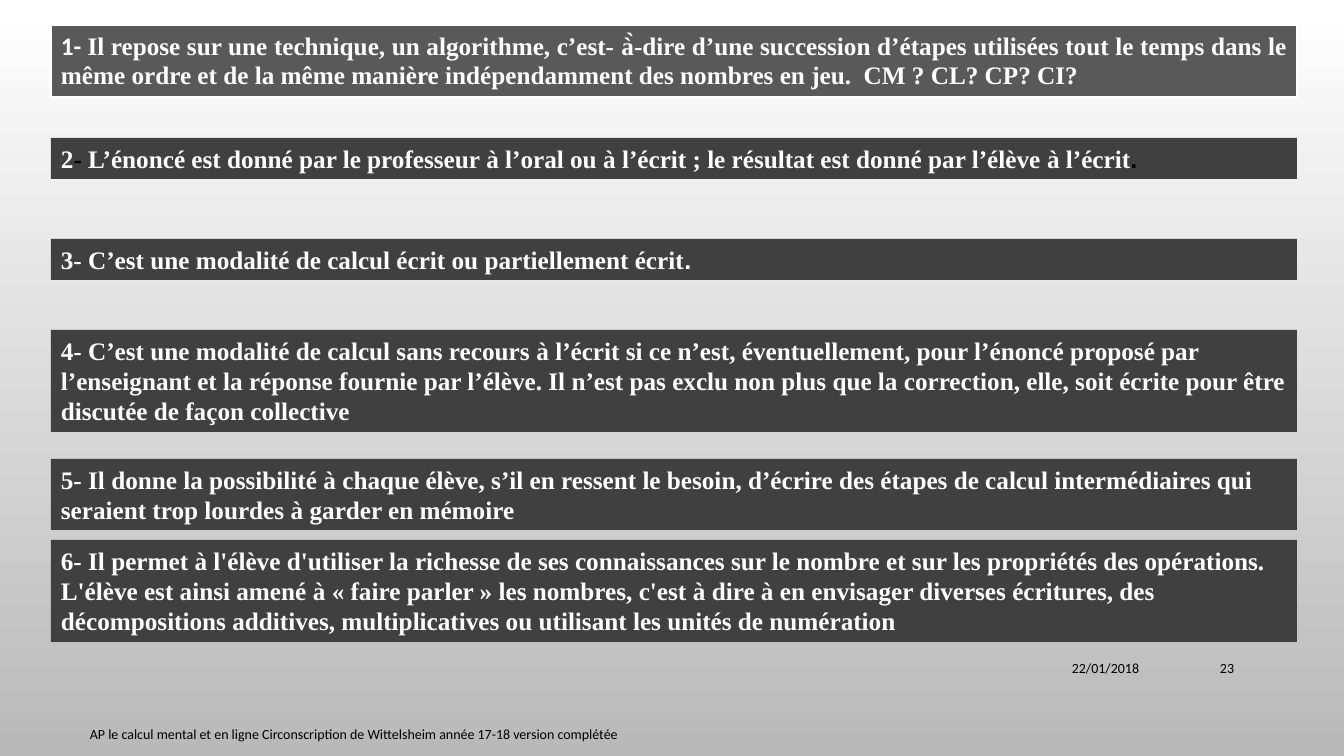
from dataclasses import dataclass

from lxml.etree import SubElement
from pptx import Presentation
from pptx.dml.color import RGBColor
from pptx.enum.shapes import MSO_SHAPE as Shape
from pptx.enum.text import MSO_ANCHOR as Anchor, MSO_AUTO_SIZE as AutoSize, PP_ALIGN as Align
from pptx.oxml.ns import qn
from pptx.util import Pt

EMU_PER_PX = 12192000 / 1344
LEFT, WIDTH = 51, 1246


def px(*lengths):
    return [round(length * EMU_PER_PX) for length in lengths]


@dataclass(frozen=True)
class Theme:
    white: str = "FFFFFF"
    black: str = "000000"
    backdrop: str = "B9B9B9"
    panel: str = "404040"
    header: str = "595959"
    serif: str = "Times New Roman"
    sans: str = "Calibri"
    mark: str = "Arial"
    body_size: int = 18
    footer_size: int = 10


class SlideBuilder:
    """Draws styled elements on the current slide."""

    def __init__(self, presentation, theme):
        self.theme = theme
        self.slide = presentation.slides.add_slide(presentation.slide_layouts[6])

    def background(self):
        fill = self.slide.background.fill
        fill.gradient()
        fill.gradient_angle = 270
        for stop, color in zip(fill.gradient_stops, (self.theme.white, self.theme.backdrop)):
            stop.color.rgb = RGBColor.from_string(color)

    def add_runs(self, frame, runs, align=Align.LEFT, **defaults):
        theme = self.theme
        base = dict(name=theme.serif, size=theme.body_size, bold=True, color=theme.white)
        paragraph = frame.paragraphs[0]
        paragraph.alignment = align
        for text, changes in runs:
            style = {**base, **defaults, **changes}
            style["size"] = Pt(style["size"])
            run = paragraph.add_run()
            run.text = text
            run.font.color.rgb = RGBColor.from_string(style.pop("color"))
            for name, value in style.items():
                setattr(run.font, name, value)

    def panel(self, top, height, runs):
        shape = self.slide.shapes.add_shape(Shape.RECTANGLE, *px(LEFT, top, WIDTH, height))
        shape.shadow.inherit = False
        shape.fill.solid()
        shape.fill.fore_color.rgb = RGBColor.from_string(self.theme.panel)
        shape.line.fill.background()
        frame = shape.text_frame
        settings = dict(word_wrap=True, vertical_anchor=Anchor.TOP,
                        auto_size=AutoSize.SHAPE_TO_FIT_TEXT)
        for name, value in settings.items():
            setattr(frame, name, value)
        self.add_runs(frame, runs)

    def table(self, top, height, runs):
        graphic = self.slide.shapes.add_table(1, 1, *px(LEFT, top, WIDTH, height))
        table = graphic.table
        table.first_row = table.horz_banding = False
        cell = table.cell(0, 0)
        cell.margin_left, cell.margin_right, cell.margin_top, cell.margin_bottom = px(10, 10, 6, 6)
        properties = cell._tc.get_or_add_tcPr()
        for side, points in dict(lnL=1, lnR=1, lnT=1, lnB=3).items():
            border = SubElement(properties, qn(f"a:{side}"), w=str(Pt(points)))
            solid = SubElement(border, qn("a:solidFill"))
            SubElement(solid, qn("a:srgbClr"), val=self.theme.white)
        cell.fill.solid()
        cell.fill.fore_color.rgb = RGBColor.from_string(self.theme.header)
        self.add_runs(cell.text_frame, runs, Align.JUSTIFY)

    def footer(self, left, top, width, text, align):
        frame = self.slide.shapes.add_textbox(*px(left, top, width, 40)).text_frame
        frame.word_wrap = True
        frame.vertical_anchor = Anchor.MIDDLE
        theme = self.theme
        self.add_runs(frame, [(text, {})], align, name=theme.sans, size=theme.footer_size,
                      bold=False, color=theme.black)


def main():
    presentation = Presentation()
    presentation.slide_width, presentation.slide_height = px(1344, 756)
    theme = Theme()
    builder = SlideBuilder(presentation, theme)
    builder.background()

    footers = [
        (847, 648, 302, "22/01/2018", Align.RIGHT),
        (80, 714, 736, "AP le calcul mental et en ligne Circonscription de Wittelsheim "
                       "année 17-18 version complétée", Align.LEFT),
        (1159, 648, 85, "23", Align.RIGHT),
    ]
    for footer in footers:
        builder.footer(*footer)

    builder.table(25, 68, [
        ("1- ", dict(name=theme.sans)),
        ("Il repose sur une technique, un algorithme, c’est- à̀-dire d’une succession d’étapes "
         "utilisées tout le temps dans le même ordre et de la même manière indépendamment "
         "des nombres en jeu.  CM ? CL? CP? CI?", {}),
    ])

    panels = [
        (138, 41, [
            ("2", {}),
            ("- ", dict(color=theme.black)),
            ("L’énoncé est donné par le professeur à l’oral ou à l’écrit ; le résultat est donné "
             "par l’élève à l’écrit", {}),
            (".", dict(name=theme.mark, color=theme.black)),
        ]),
        (239, 41, [
            ("3- C’est une modalité de calcul écrit ou partiellement écrit", {}),
            (".", dict(name=theme.mark)),
        ]),
        (330, 102, [
            ("4- C’est une modalité de calcul sans recours à l’écrit si ce n’est, éventuellement, "
             "pour l’énoncé proposé par l’enseignant et la réponse fournie par l’élève. Il n’est "
             "pas exclu non plus que la correction, elle, soit écrite pour être discutée de façon "
             "collective", {}),
        ]),
        (459, 71, [
            ("5- Il donne la possibilité à chaque élève, s’il en ressent le besoin, d’écrire des "
             "étapes de calcul intermédiaires qui seraient trop lourdes à garder en mémoire", {}),
        ]),
        (540, 102, [
            ("6- Il permet à l'élève d'utiliser la richesse de ses connaissances sur le nombre et "
             "sur les propriétés des opérations. L'élève est ainsi amené à « faire parler » les "
             "nombres, c'est à dire à en envisager diverses écritures, des décompositions "
             "additives, multiplicatives ou utilisant les unités de numération", {}),
        ]),
    ]
    for panel in panels:
        builder.panel(*panel)

    presentation.save("out.pptx")


if __name__ == "__main__":
    main()
